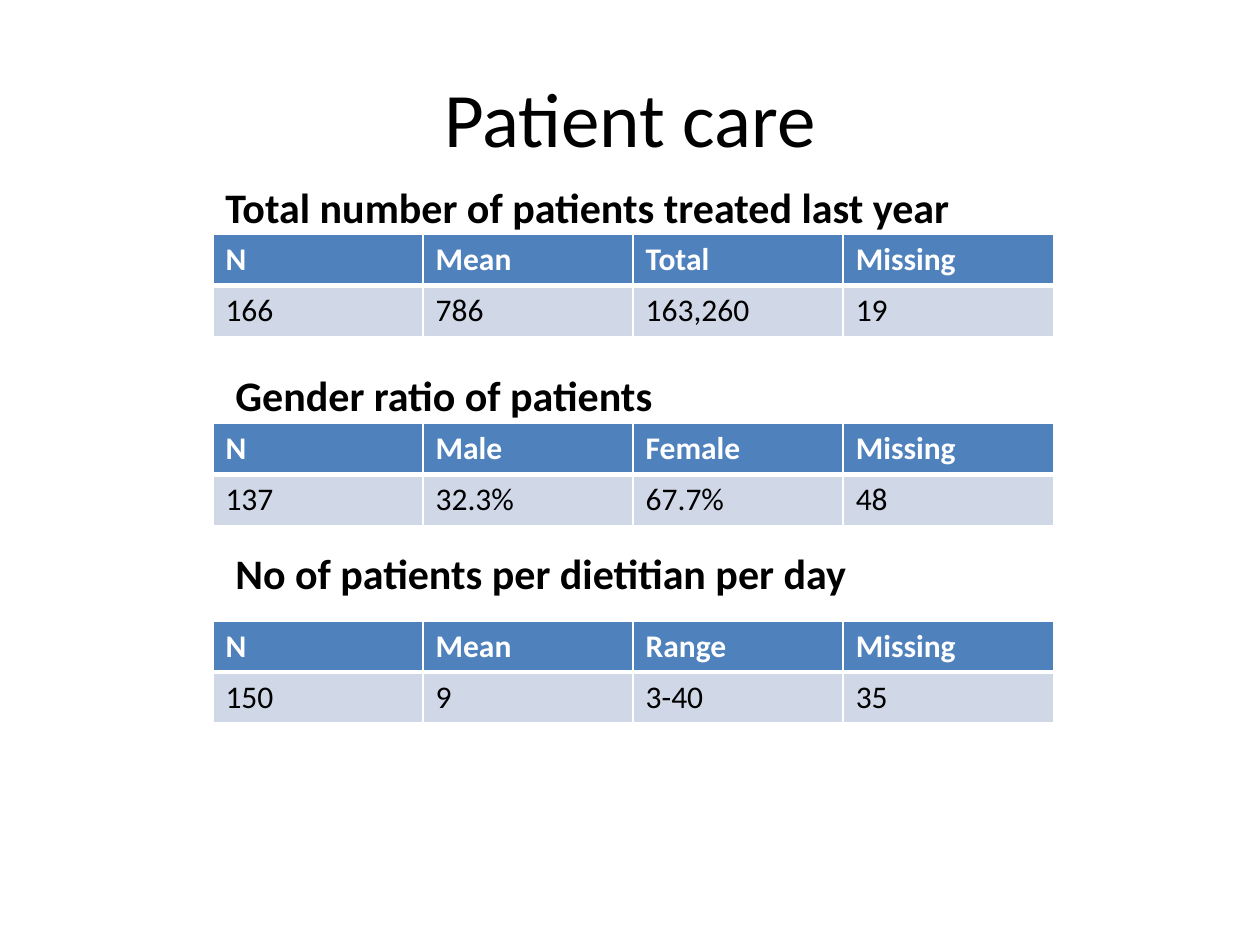
from lxml import etree
from pptx import Presentation
from pptx.dml.color import RGBColor
from pptx.enum.text import MSO_ANCHOR, MSO_AUTO_SIZE, PP_ALIGN
from pptx.oxml.ns import qn
from pptx.util import Inches, Pt

MIDDLE = MSO_ANCHOR.MIDDLE
GROW = MSO_AUTO_SIZE.SHAPE_TO_FIT_TEXT
CENTER, LEFT = PP_ALIGN.CENTER, PP_ALIGN.LEFT
TITLE_ONLY = 5
GRID_COLUMNS, GRID_ROWS = 100, 75
TABLE_LEFT, TABLE_WIDTH, TABLE_HEIGHT = 16.9, 66.7, 8.1
HEADING_HEIGHT = 5

SECTIONS = [
    ("Total number of patients treated last year", (16.9, 13.9, 63), 18.6,
     [["N", "Mean", "Total", "Missing"], ["166", "786", "163,260", "19"]]),
    ("Gender ratio of patients", (17.7, 28.8, 47.2), 33.6,
     [["N", "Male", "Female", "Missing"], ["137", "32.3%", "67.7%", "48"]]),
    ("No of patients per dietitian per day", (17.7, 43, 61.4), 49.3,
     [["N", "Mean", "Range", "Missing"], ["150", "9", "3-40", "35"]]),
]


def color(value):
    return RGBColor.from_string(value)


class SlideBuilder:
    font = "Calibri"
    black, white = "000000", "FFFFFF"
    header_fill, body_fill = "4F81BD", "D0D8E8"

    def __init__(self, deck):
        self.deck = deck
        self.page = deck.slides.add_slide(deck.slide_layouts[TITLE_ONLY])

    def area(self, left, top, width, height):
        column = self.deck.slide_width / GRID_COLUMNS
        row = self.deck.slide_height / GRID_ROWS
        return (round(left * column), round(top * row),
                round(width * column), round(height * row))

    def add_text(self, frame, text, size, ink, bold=False, align=LEFT):
        para = frame.paragraphs[0]
        para.alignment = align
        span = para.add_run()
        span.text = text
        span.font.name = self.font
        span.font.size = Pt(size)
        span.font.bold = bold
        span.font.color.rgb = color(ink)

    def title(self, text, *place):
        box = self.page.shapes.title
        box.left, box.top, box.width, box.height = self.area(*place)
        box.text_frame.vertical_anchor = MIDDLE
        self.add_text(box.text_frame, text, 44, self.black, align=CENTER)

    def heading(self, text, *place):
        frame = self.page.shapes.add_textbox(*self.area(*place)).text_frame
        frame.word_wrap = True
        frame.auto_size = GROW
        self.add_text(frame, text, 24, self.black, bold=True)

    def border(self, cell, side, points):
        properties = cell._tc.get_or_add_tcPr()
        line = etree.SubElement(properties, qn(f"a:ln{side}"), w=str(Pt(points)))
        fill = etree.SubElement(line, qn("a:solidFill"))
        etree.SubElement(fill, qn("a:srgbClr"), val=self.white)

    def table(self, rows, *place):
        grid = self.page.shapes.add_table(
            len(rows), len(rows[0]), *self.area(*place)).table
        for row_index, values in enumerate(rows):
            header = row_index == 0
            for column_index, value in enumerate(values):
                cell = grid.cell(row_index, column_index)
                for side in "LRTB":
                    thick = side == ("B" if header else "T")
                    self.border(cell, side, 3 if thick else 1)
                cell.fill.solid()
                cell.fill.fore_color.rgb = color(
                    self.header_fill if header else self.body_fill)
                ink = self.white if header else self.black
                self.add_text(cell.text_frame, value, 18, ink, bold=header)


def main():
    deck = Presentation()
    deck.slide_width, deck.slide_height = Inches(10), Inches(7.5)
    builder = SlideBuilder(deck)
    builder.title("Patient care", 5, 3, 90, 12.5)
    for heading, (left, top, width), table_top, rows in SECTIONS:
        builder.table(rows, TABLE_LEFT, table_top, TABLE_WIDTH, TABLE_HEIGHT)
        builder.heading(heading, left, top, width, HEADING_HEIGHT)
    deck.save("out.pptx")


if __name__ == "__main__":
    main()
